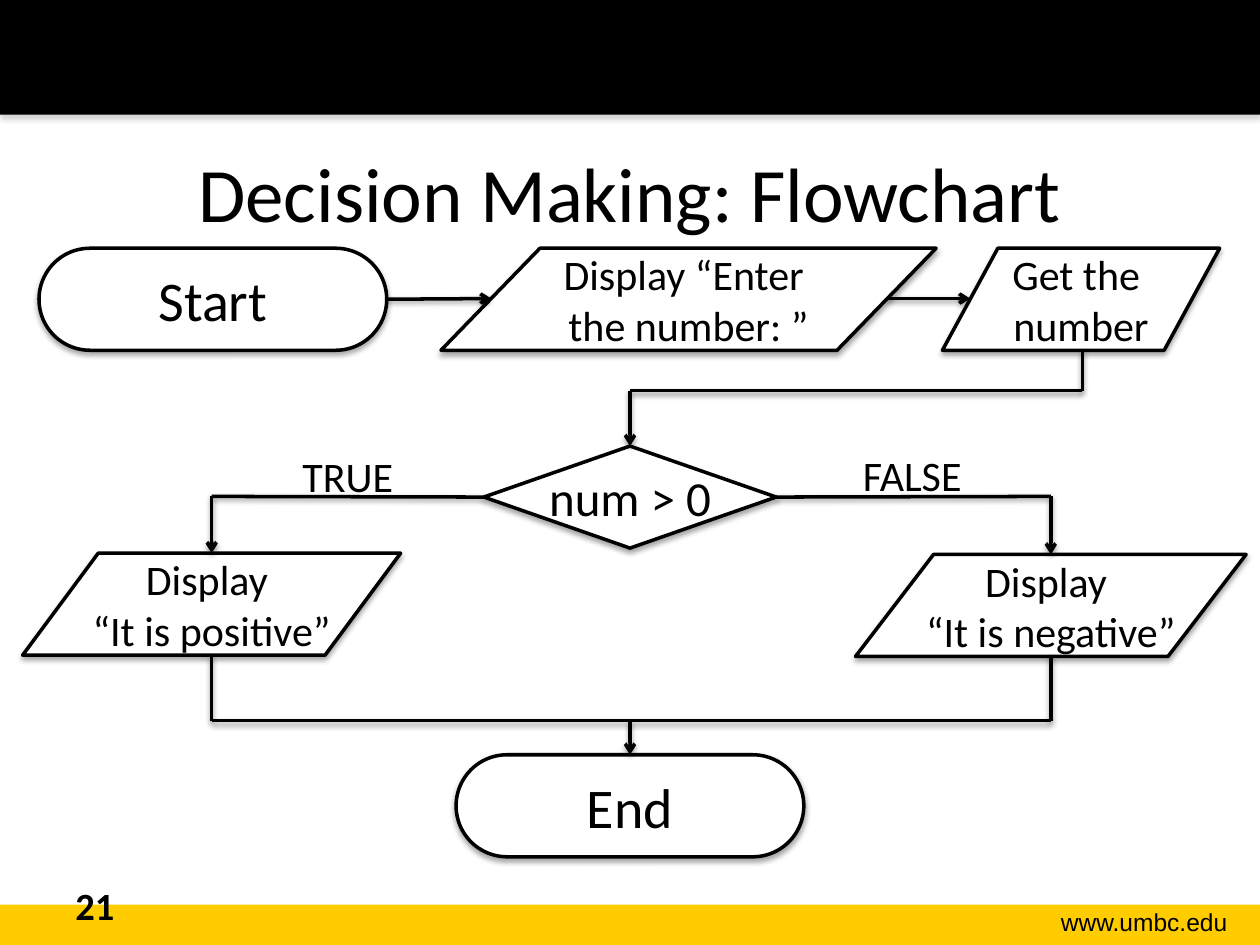
"""Build the decision making flowchart slide."""
from dataclasses import dataclass
from typing import Optional

from pptx import Presentation
from pptx.dml.color import RGBColor
from pptx.enum.shapes import MSO_CONNECTOR as Link, MSO_SHAPE as Kind
from pptx.enum.text import MSO_ANCHOR as Anchor, PP_ALIGN as Align
from pptx.oxml import parse_xml
from pptx.oxml.ns import nsdecls, qn
from pptx.util import Inches, Pt

BLACK = RGBColor(0x00, 0x00, 0x00)
WHITE = RGBColor(0xFF, 0xFF, 0xFF)
GRAY = RGBColor(0x80, 0x80, 0x80)
GOLD = RGBColor(0xFF, 0xCC, 0x00)
HIGH = 0.81
TOP, LEFT, RIGHT = 0, 1, 3
PILL, SLANT, FORK = Kind.ROUNDED_RECTANGLE, Kind.FLOWCHART_DATA, Kind.FLOWCHART_DECISION


@dataclass
class Node:
    key: str
    kind: Kind
    left: float
    top: float
    width: float
    text: str
    size: int


@dataclass
class Wire:
    x1: float
    y1: float
    x2: float
    y2: float
    arrow: bool = False
    begin: Optional[tuple] = None
    end: Optional[tuple] = None


@dataclass
class Label:
    box: tuple
    text: str
    size: int
    align: Align
    bold: bool = False
    font: str = "Calibri"


NODES = [
    Node("start", PILL, 0.31, 1.97, 2.76, "Start", 32),
    Node("ask", SLANT, 3.5, 1.97, 3.93, "Display “Enter \nthe number: ”", 24),
    Node("get", SLANT, 7.48, 1.97, 2.2, "Get the \nnumber", 24),
    Node("test", FORK, 3.84, 3.54, 2.32, "num > 0", 28),
    Node("plus", SLANT, 0.18, 4.39, 3, "Display \n“It is positive”", 24),
    Node("minus", SLANT, 6.79, 4.4, 3.1, "Display \n“It is negative”", 24),
    Node("end", PILL, 3.62, 5.99, 2.76, "End", 32),
]
WIRES = [
    Wire(3.07, 2.37, 3.9, 2.37, True, begin=("start", RIGHT)),
    Wire(7.04, 2.37, 7.7, 2.37, True),
    Wire(8.59, 2.78, 8.59, 3.1),
    Wire(8.59, 3.1, 5, 3.1),
    Wire(5, 3.1, 5, 3.54, True, end=("test", TOP)),
    Wire(3.84, 3.94, 1.68, 3.94, begin=("test", LEFT)),
    Wire(1.68, 3.94, 1.68, 4.39, True),
    Wire(6.16, 3.94, 8.34, 3.94, begin=("test", RIGHT)),
    Wire(8.34, 3.94, 8.34, 4.4, True),
    Wire(1.68, 5.2, 1.68, 5.72),
    Wire(8.34, 5.2, 8.34, 5.72),
    Wire(8.34, 5.72, 1.68, 5.72),
    Wire(5, 5.72, 5, 5.99, True, end=("end", TOP)),
]
LABELS = [
    Label((7.85, 7.15, 1.99, 0.34), "www.umbc.edu", 14, Align.RIGHT, font="Arial"),
    Label((0.5, 6.95, 2.33, 0.4), "21", 22, Align.LEFT, True),
    Label((1.96, 3.53, 1.6, 0.5), "TRUE", 24, Align.CENTER),
    Label((6.44, 3.52, 1.6, 0.5), "FALSE", 24, Align.CENTER),
]


def write(frame, text: str, size: int, align=Align.CENTER, bold=False, font="Calibri") -> None:
    para = frame.paragraphs[0]
    para.text, para.alignment = text, align
    para.font.color.rgb = BLACK
    for name, value in {"name": font, "size": Pt(size), "bold": bold}.items():
        setattr(para.font, name, value)


def shade(shape, color: RGBColor = BLACK, alpha: int = 35, dist: float = 1.8) -> None:
    shape._element.spPr.append(parse_xml(
        f'<a:effectLst {nsdecls("a")}><a:outerShdw blurRad="{Pt(3.1)}" dist="{Pt(dist)}"'
        f' dir="5400000" rotWithShape="0"><a:srgbClr val="{color}">'
        f'<a:alpha val="{alpha * 1000}"/></a:srgbClr></a:outerShdw></a:effectLst>'))


def draw_bar(slide, top: float, high: float, color: RGBColor):
    bar = slide.shapes.add_shape(Kind.RECTANGLE, *map(Inches, (0, top, 10, high)))
    bar.fill.solid()
    bar.fill.fore_color.rgb = color
    bar.line.fill.background()
    return bar


def draw_node(slide, node: Node):
    box = map(Inches, (node.left, node.top, node.width, HIGH))
    shape = slide.shapes.add_shape(node.kind, *box)
    if node.kind == PILL:
        shape.adjustments[0] = 0.5
    shape.fill.solid()
    shape.fill.fore_color.rgb = WHITE
    shape.line.color.rgb = BLACK
    shape.line.width = Pt(2)
    shade(shape)
    frame = shape.text_frame
    form = {"vertical_anchor": Anchor.MIDDLE, "word_wrap": node.kind == PILL}
    for name, value in form.items():
        setattr(frame, name, value)
    write(frame, node.text, node.size)
    return shape


def draw_wire(slide, wire: Wire, nodes: dict) -> None:
    ends = map(Inches, (wire.x1, wire.y1, wire.x2, wire.y2))
    line = slide.shapes.add_connector(Link.STRAIGHT, *ends)
    for join, spot in ((line.begin_connect, wire.begin), (line.end_connect, wire.end)):
        if spot:
            join(nodes[spot[0]], spot[1])
    line.line.color.rgb = BLACK
    line.line.width = Pt(2)
    if wire.arrow:
        stroke = line._element.spPr.find(qn("a:ln"))
        stroke.append(parse_xml(f'<a:tailEnd {nsdecls("a")} type="arrow"/>'))
    shade(line, alpha=38, dist=1.6)


def draw_label(slide, label: Label) -> None:
    frame = slide.shapes.add_textbox(*map(Inches, label.box)).text_frame
    frame.word_wrap = True
    write(frame, label.text, label.size, label.align, label.bold, label.font)


def main() -> None:
    deck = Presentation()
    deck.slide_width, deck.slide_height = Inches(10), Inches(7.5)
    slide = deck.slides.add_slide(deck.slide_layouts[5])
    draw_bar(slide, 7.18, 0.32, GOLD).shadow.inherit = False
    shade(draw_bar(slide, 0, 0.91, BLACK), GRAY)
    title = slide.shapes.title
    box = {"left": 0.5, "top": 0.9, "width": 9, "height": 1.25}
    for name, value in box.items():
        setattr(title, name, Inches(value))
    title.text_frame.vertical_anchor = Anchor.MIDDLE
    write(title.text_frame, "Decision Making: Flowchart", 44)
    nodes = {node.key: draw_node(slide, node) for node in NODES}
    for wire in WIRES:
        draw_wire(slide, wire, nodes)
    for label in LABELS:
        draw_label(slide, label)
    deck.save("out.pptx")


if __name__ == "__main__":
    main()
